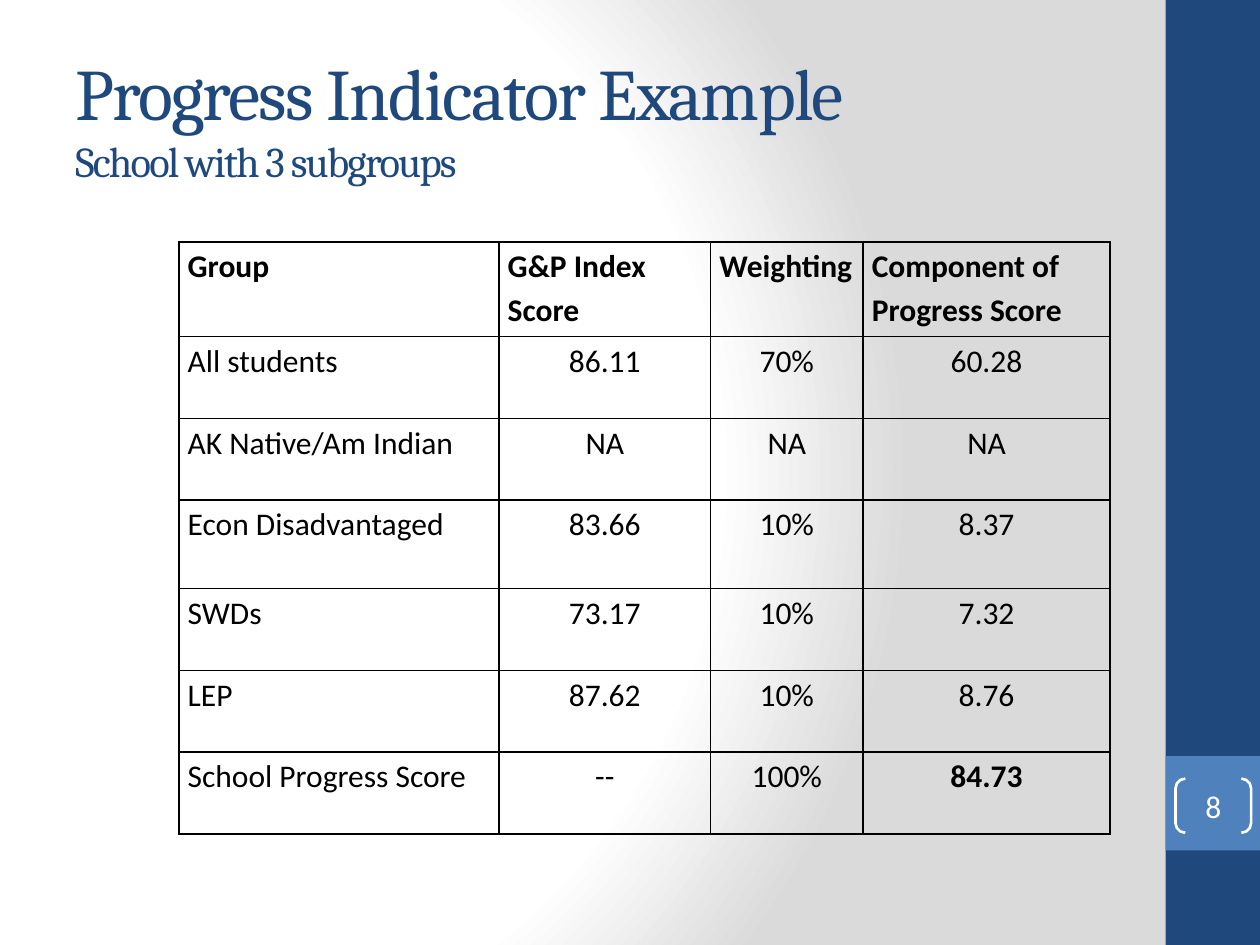
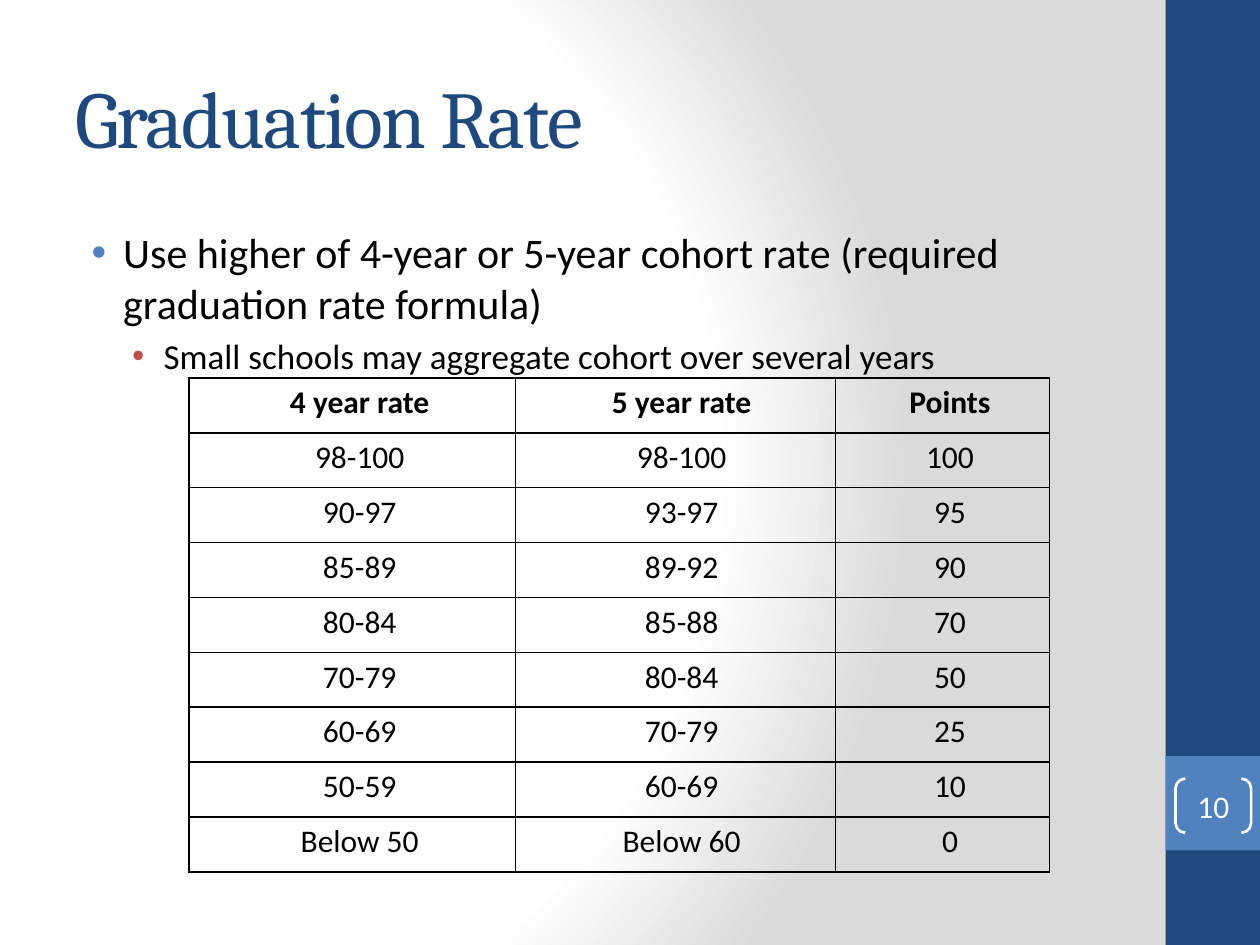
from dataclasses import dataclass

from pptx import Presentation
from pptx import util as u
from pptx.dml.color import RGBColor
from pptx.enum import shapes, text
from pptx.oxml import parse_xml
from pptx.oxml.ns import nsdecls, qn


@dataclass(frozen=True)
class Theme:
    navy: str = "1F497D"
    blue: str = "4F81BD"
    red: str = "C0504D"
    black: str = "000000"
    white: str = "FFFFFF"
    grey: str = "DADADA"
    heading_font: str = "Cambria"
    body_font: str = "Calibri"
    title_size: float = 46
    long_title_size: float = 41.4
    subtitle_size: float = 24.3
    bullet_sizes: tuple = (24, 20)
    table_size: float = 18


THEME = Theme()
WIDTH, HEIGHT = 10, 7.5
BAND = 0.75
MARGIN, CONTENT_WIDTH = 0.5, 8.33
LEFT, CENTER = text.PP_ALIGN.LEFT, text.PP_ALIGN.CENTER

PROGRESS = {
    "number": "8",
    "title": [("Progress Indicator Example", THEME.long_title_size),
              ("School with 3 subgroups", THEME.subtitle_size)],
    "bullets": [],
    "table": {
        "origin": (1.42, 1.92),
        "columns": [2.54, 1.68, 1.21, 1.96],
        "heights": [0.75, 0.65, 0.65, 0.7, 0.65, 0.65, 0.65],
        "indents": [0, 0, 0, 0],
        "header_align": [LEFT] * 4,
        "body_align": [LEFT] + [CENTER] * 3,
        "bold_cells": [(6, 3)],
        "rows": [
            ("Group", "G&P Index Score", "Weighting", "Component of Progress Score"),
            ("All students", "86.11", "70%", "60.28"),
            ("AK Native/Am Indian", "NA", "NA", "NA"),
            ("Econ Disadvantaged", "83.66", "10%", "8.37"),
            ("SWDs", "73.17", "10%", "7.32"),
            ("LEP", "87.62", "10%", "8.76"),
            ("School Progress Score", "--", "100%", "84.73"),
        ],
    },
}

GRADUATION = {
    "number": "10",
    "title": [("Graduation Rate", THEME.title_size)],
    "bullets": [
        (0, "Use higher of 4-year or 5-year cohort rate (required graduation rate formula)"),
        (1, "Small schools may aggregate cohort over several years"),
    ],
    "table": {
        "origin": (1.5, 3),
        "columns": [2.59, 2.54, 1.7],
        "heights": [3.92 / 9] * 9,
        "indents": [0.12, 0.1, 0.12],
        "header_align": [CENTER] * 3,
        "body_align": [CENTER] * 3,
        "bold_cells": [],
        "rows": [
            ("4 year rate", "5 year rate", "Points"),
            ("98-100", "98-100", "100"),
            ("90-97", "93-97", "95"),
            ("85-89", "89-92", "90"),
            ("80-84", "85-88", "70"),
            ("70-79", "80-84", "50"),
            ("60-69", "70-79", "25"),
            ("50-59", "60-69", "10"),
            ("Below 50", "Below 60", "0"),
        ],
    },
}


def inches(*lengths):
    return [u.Inches(length) for length in lengths]


def add_span(para, words, size, color, font=THEME.body_font, bold=False):
    span = para.add_run()
    span.text = words
    span.font.name, span.font.size, span.font.bold = font, u.Pt(size), bold
    span.font.color.rgb = RGBColor.from_string(color)
    return span


def set_indent(para, left, first=0):
    props = para._p.get_or_add_pPr()
    props.set("marL", str(u.Inches(left)))
    props.set("indent", str(u.Inches(first)))
    return props


def add_background(page):
    stops = "".join(
        f'<a:gs pos="{share * 1000}"><a:srgbClr val="{color}"/></a:gs>'
        for share, color in ((0, THEME.white), (75, THEME.white), (100, THEME.grey)))
    page._element.cSld.insert(0, parse_xml(
        f'<p:bg {nsdecls("p", "a")}><p:bgPr><a:gradFill rotWithShape="1">'
        f'<a:gsLst>{stops}</a:gsLst><a:path path="circle">'
        '<a:fillToRect l="20000" t="50000" r="100000" b="50000"/></a:path>'
        '</a:gradFill><a:effectLst/></p:bgPr></p:bg>'))


def add_side_band(page, number):
    for top, height, color in ((0, HEIGHT, THEME.navy), (6, BAND, THEME.blue)):
        band = page.shapes.add_shape(shapes.MSO_SHAPE.RECTANGLE,
                                     *inches(WIDTH - BAND, top, BAND, height))
        band.shadow.inherit = False
        band.fill.solid()
        band.fill.fore_color.rgb = RGBColor.from_string(color)
        band.line.fill.background()

    bracket = page.shapes.add_shape(shapes.MSO_SHAPE.DOUBLE_BRACKET,
                                    *inches(9.33, 6.18, 0.6, 0.43))
    bracket.adjustments[0] = 0.18
    bracket.shadow.inherit = False
    bracket.fill.background()
    bracket.line.color.rgb = RGBColor.from_string(THEME.white)
    bracket.line.width = u.Pt(1.5)
    frame = bracket.text_frame
    frame.margin_left = frame.margin_right = frame.margin_top = frame.margin_bottom = 0
    frame.vertical_anchor = text.MSO_ANCHOR.MIDDLE
    para = frame.paragraphs[0]
    para.alignment = CENTER
    add_span(para, number, THEME.table_size, THEME.white)


def add_text_box(page, top, height):
    frame = page.shapes.add_textbox(*inches(MARGIN, top, CONTENT_WIDTH, height)).text_frame
    frame.word_wrap = True
    return frame


def add_title(page, lines):
    frame = add_text_box(page, 0.3, 1.25)
    frame.vertical_anchor = text.MSO_ANCHOR.MIDDLE
    para = frame.paragraphs[0]
    for index, (words, size) in enumerate(lines):
        if index:
            para.add_line_break()
        span = add_span(para, words, size, THEME.navy, THEME.heading_font)
        span._r.get_or_add_rPr().set("spc", "-100")


def add_bullets(page, bullets):
    frame = add_text_box(page, 1.75, 5.25)
    for index, (level, words) in enumerate(bullets):
        para = frame.add_paragraph() if index else frame.paragraphs[0]
        size = THEME.bullet_sizes[level]
        para.level = level
        para.space_before = u.Pt(size * 0.2)
        props = set_indent(para, (0.38, 0.7)[level], -0.25)
        color = (THEME.blue, THEME.red)[level]
        props.append(parse_xml(
            f'<a:buClr {nsdecls("a")}><a:srgbClr val="{color}"/></a:buClr>'))
        props.append(parse_xml(f'<a:buFont {nsdecls("a")} typeface="Arial"/>'))
        props.append(parse_xml(f'<a:buChar {nsdecls("a")} char="•"/>'))
        add_span(para, words, size, THEME.black)


def add_borders(cell):
    props = cell._tc.get_or_add_tcPr()
    for index, side in enumerate(("lnL", "lnR", "lnT", "lnB")):
        for old in props.findall(qn(f"a:{side}")):
            props.remove(old)
        props.insert(index, parse_xml(
            f'<a:{side} {nsdecls("a")} w="{u.Pt(1)}"><a:solidFill>'
            f'<a:srgbClr val="{THEME.black}"/></a:solidFill></a:{side}>'))


def add_table(page, content):
    rows, columns, heights = content["rows"], content["columns"], content["heights"]
    table = page.shapes.add_table(
        len(rows), len(columns),
        *inches(*content["origin"], sum(columns), sum(heights))).table
    table.first_row = table.horz_banding = False
    for column, width in zip(table.columns, columns):
        column.width = u.Inches(width)
    for row, height in zip(table.rows, heights):
        row.height = u.Inches(height)
    for r, values in enumerate(rows):
        aligns = content["body_align"] if r else content["header_align"]
        for c, value in enumerate(values):
            cell = table.cell(r, c)
            cell.fill.background()
            cell.margin_left = cell.margin_right = u.Inches(0.07)
            cell.margin_top = cell.margin_bottom = 0
            para = cell.text_frame.paragraphs[0]
            para.alignment, para.line_spacing = aligns[c], 1.15
            set_indent(para, content["indents"][c])
            bold = r == 0 or (r, c) in content["bold_cells"]
            add_span(para, value, THEME.table_size, THEME.black, bold=bold)
            add_borders(cell)


def add_page(deck, content):
    page = deck.slides.add_slide(deck.slide_layouts[6])
    add_background(page)
    add_side_band(page, content["number"])
    add_title(page, content["title"])
    if content["bullets"]:
        add_bullets(page, content["bullets"])
    add_table(page, content["table"])


def main():
    deck = Presentation()
    deck.slide_width, deck.slide_height = inches(WIDTH, HEIGHT)
    for content in (PROGRESS, GRADUATION):
        add_page(deck, content)
    deck.save("out.pptx")


if __name__ == "__main__":
    main()
